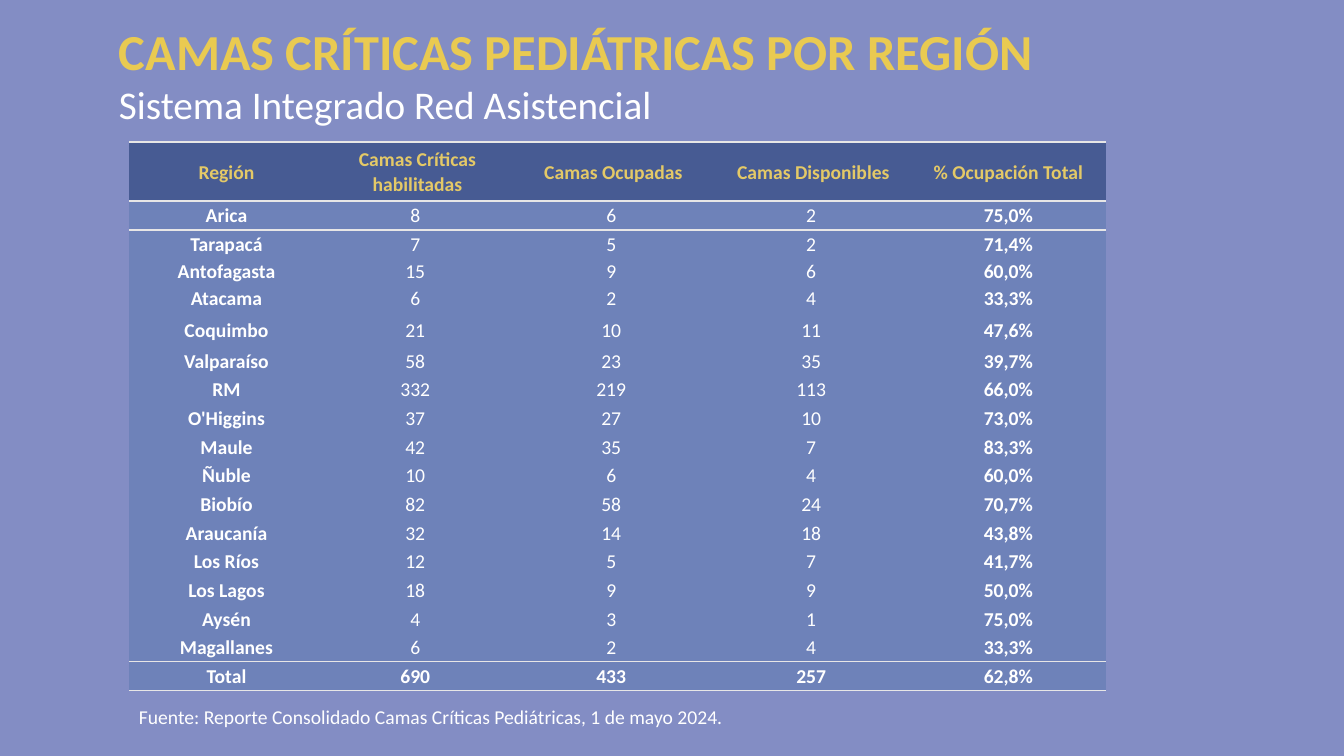
from lxml.etree import SubElement
from pptx import Presentation
from pptx.dml.color import RGBColor
from pptx.enum.text import MSO_ANCHOR as Anchor, MSO_AUTO_SIZE as AutoSize, PP_ALIGN as Align
from pptx.oxml import parse_xml
from pptx.oxml.ns import nsdecls, qn
from pptx.util import Emu, Pt

EMU_PER_PX = 914400 / 100.8
FONT = "Calibri"
BACKGROUND, HEADER_FILL, BODY_FILL = "838DC4", "475B93", "6E82B9"
TITLE_GOLD, HEADER_GOLD, WHITE, RULE = "E9CA51", "E4C967", "FFFFFF", "E7E6E6"
PLAIN_TABLE_STYLE = "{2D5ABB26-0587-4C30-8999-92F81FD0307C}"

HEADINGS = ["Región", "Camas Críticas habilitadas", "Camas Ocupadas",
            "Camas Disponibles", "% Ocupación Total"]
# Region, enabled beds, occupied beds
REGIONS = [
    ("Arica", 8, 6), ("Tarapacá", 7, 5), ("Antofagasta", 15, 9), ("Atacama", 6, 2),
    ("Coquimbo", 21, 10), ("Valparaíso", 58, 23), ("RM", 332, 219), ("O'Higgins", 37, 27),
    ("Maule", 42, 35), ("Ñuble", 10, 6), ("Biobío", 82, 58), ("Araucanía", 32, 14),
    ("Los Ríos", 12, 5), ("Los Lagos", 18, 9), ("Aysén", 4, 3), ("Magallanes", 6, 2),
]
COLUMN_WIDTHS = [195, 187, 205, 195, 195]
ROW_HEIGHTS = [59, 29, 29, 25, 29, 35, 27, 29] + [29, 29, 28] * 3 + [29]


def px(length):
    return Emu(round(length * EMU_PER_PX))


def color(hex_code):
    return RGBColor.from_string(hex_code)


def set_font(paragraph, size, hex_code, bold=False):
    font = paragraph.font
    font.name, font.size, font.bold = FONT, Pt(size), bold
    font.color.rgb = color(hex_code)


def add_text(slide, left, top, width, height, lines, anchor=Anchor.TOP):
    """Add a text box; each line is (text, size, color, bold)."""
    frame = slide.shapes.add_textbox(px(left), px(top), px(width), px(height)).text_frame
    frame.word_wrap = True
    frame.auto_size = AutoSize.NONE
    frame.vertical_anchor = anchor
    frame.text = "\n".join(line[0] for line in lines)
    for paragraph, (_, *style) in zip(frame.paragraphs, lines):
        set_font(paragraph, *style)


def set_rules(cell, top, bottom):
    """Draw the horizontal cell borders that are asked for."""
    properties = cell._tc.get_or_add_tcPr()
    sides = [side for side, shown in (("lnT", top), ("lnB", bottom)) if shown]
    for position, side in enumerate(sides):
        line = parse_xml(f'<a:{side} {nsdecls("a")} w="{Pt(1)}"/>')
        fill = SubElement(line, qn("a:solidFill"))
        SubElement(fill, qn("a:srgbClr"), val=RULE)
        properties.insert(position, line)


def fill_cell(cell, text, hex_code, fill, bold, side_margin, top_margin):
    cell.fill.solid()
    cell.fill.fore_color.rgb = color(fill)
    cell.vertical_anchor = Anchor.MIDDLE
    cell.margin_left = cell.margin_right = px(side_margin)
    cell.margin_top, cell.margin_bottom = px(top_margin), 0
    cell.text = text
    paragraph = cell.text_frame.paragraphs[0]
    paragraph.alignment = Align.CENTER
    set_font(paragraph, 14, hex_code, bold)
    return paragraph


def region_row(name, enabled, occupied):
    """Derive the free beds and the occupancy rate of a region."""
    counts = [f"{count} " for count in (enabled, occupied, enabled - occupied)]
    rate = f"{100 * occupied / enabled:.1f}%".replace(".", ",")
    return [name, *counts, rate]


def add_bed_table(slide, left, top):
    total = ("Total", sum(r[1] for r in REGIONS), sum(r[2] for r in REGIONS))
    rows = [HEADINGS] + [region_row(*region) for region in REGIONS + [total]]
    last_row, last_column = len(rows) - 1, len(HEADINGS) - 1
    table = slide.shapes.add_table(
        len(rows), len(HEADINGS), px(left), px(top),
        px(sum(COLUMN_WIDTHS)), px(sum(ROW_HEIGHTS))).table
    table._tbl.tblPr.find(qn("a:tableStyleId")).text = PLAIN_TABLE_STYLE
    table.horz_banding = False
    for column, width in zip(table.columns, COLUMN_WIDTHS):
        column.width = px(width)
    for row, height in zip(table.rows, ROW_HEIGHTS):
        row.height = px(height)

    for r, texts in enumerate(rows):
        for c, text in enumerate(texts):
            cell = table.cell(r, c)
            if r == 0:
                heading = fill_cell(cell, text, HEADER_GOLD, HEADER_FILL, True, 7, 0)
                heading.line_spacing = 1.07
            else:
                bold = r == last_row or c in (0, last_column)
                fill_cell(cell, text, WHITE, BODY_FILL, bold, 1, 1)
            set_rules(cell, top=r in (0, 1, last_row),
                      bottom=r in (0, last_row - 1, last_row))


def main():
    deck = Presentation()
    deck.slide_width, deck.slide_height = px(1344), px(756)
    slide = deck.slides.add_slide(deck.slide_layouts[6])
    slide.background.fill.solid()
    slide.background.fill.fore_color.rgb = color(BACKGROUND)

    add_text(slide, 109, 14, 1023, 119, [
        ("CAMAS CRÍTICAS PEDIÁTRICAS POR REGIÓN", 36, TITLE_GOLD, True),
        ("Sistema Integrado Red Asistencial", 28, WHITE, False),
    ], Anchor.MIDDLE)
    add_text(slide, 129, 700, 1045, 34, [
        ("Fuente: Reporte Consolidado Camas Críticas Pediátricas, 1 de mayo 2024.",
         14, WHITE, False),
    ])
    add_bed_table(slide, 129, 142)
    deck.save("out.pptx")


if __name__ == "__main__":
    main()
